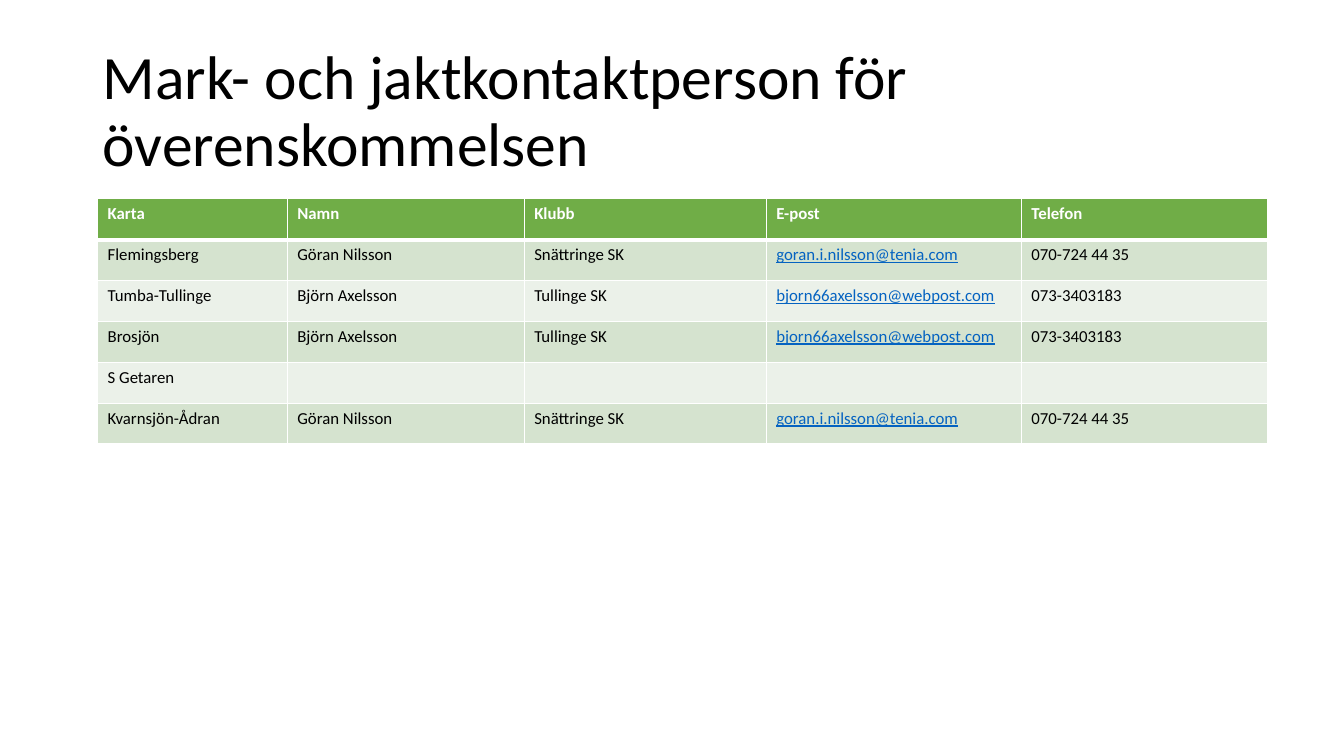
from pptx import Presentation
from pptx.dml.color import RGBColor
from pptx.enum.text import MSO_ANCHOR, PP_ALIGN
from pptx.oxml import parse_xml
from pptx.oxml.ns import nsdecls
from pptx.util import Cm, Pt

BLACK = RGBColor(0x00, 0x00, 0x00)
WHITE = RGBColor(0xFF, 0xFF, 0xFF)
HEADER_GREEN = RGBColor(0x70, 0xAD, 0x47)
BAND_GREENS = (RGBColor(0xEB, 0xF1, 0xE9), RGBColor(0xD5, 0xE3, 0xCF))
LINK_BLUE = RGBColor(0x05, 0x63, 0xC1)

GORAN = ("Göran Nilsson", "Snättringe SK", "goran.i.nilsson@tenia.com", "070-724 44 35")
BJORN = ("Björn Axelsson", "Tullinge SK", "bjorn66axelsson@webpost.com", "073-3403183")
CONTACTS = [
    ("Karta", "Namn", "Klubb", "E-post", "Telefon"),
    ("Flemingsberg", *GORAN),
    ("Tumba-Tullinge", *BJORN),
    ("Brosjön", *BJORN),
    ("S Getaren", "", "", "", ""),
    ("Kvarnsjön-Ådran", *GORAN),
]
COLUMN_WIDTHS = (4.78, 5.97, 6.1, 6.43, 6.2)
ROW_HEIGHT = 1.03
EMAIL_COLUMN = 3


def add_border(cell, side, points):
    cell._tc.get_or_add_tcPr().append(parse_xml(
        f'<a:{side} {nsdecls("a")} w="{Pt(points)}"><a:solidFill>'
        f'<a:srgbClr val="{WHITE}"/></a:solidFill></a:{side}>'))


def format_font(font, values):
    for name, value in values.items():
        if name == "color":
            font.color.rgb = value
        else:
            setattr(font, name, value)


presentation = Presentation()
presentation.slide_width = Cm(33.87)
presentation.slide_height = Cm(19.05)
slide = presentation.slides.add_slide(presentation.slide_layouts[5])

title = slide.shapes.title
title.left, title.top, title.width, title.height = Cm(2.33), Cm(1.01), Cm(29.21), Cm(3.68)
title.text_frame.text = "Mark- och jaktkontaktperson för överenskommelsen"
title.text_frame.word_wrap = True
title.text_frame.vertical_anchor = MSO_ANCHOR.MIDDLE
paragraph = title.text_frame.paragraphs[0]
paragraph.alignment = PP_ALIGN.LEFT
paragraph.line_spacing = 0.9
format_font(paragraph.runs[0].font, {"name": "Calibri", "size": Pt(44), "color": BLACK})

table = slide.shapes.add_table(
    len(CONTACTS), len(COLUMN_WIDTHS), Cm(2.46), Cm(5.01),
    Cm(sum(COLUMN_WIDTHS)), Cm(ROW_HEIGHT * len(CONTACTS))).table
for column, width in zip(table.columns, COLUMN_WIDTHS):
    column.width = Cm(width)

for row_index, contact in enumerate(CONTACTS):
    table.rows[row_index].height = Cm(ROW_HEIGHT)
    is_header = row_index == 0
    for column_index, text in enumerate(contact):
        cell = table.cell(row_index, column_index)
        is_link = column_index == EMAIL_COLUMN and not is_header
        borders = {"lnL": 1, "lnR": 1, "lnT": 3 if row_index == 1 else 1,
                   "lnB": 3 if is_header else 1}
        for side, points in borders.items():
            add_border(cell, side, points)
        cell.fill.solid()
        cell.fill.fore_color.rgb = HEADER_GREEN if is_header else BAND_GREENS[row_index % 2]
        run = cell.text_frame.paragraphs[0].add_run()
        run.text = text
        format_font(run.font, {
            "name": "Calibri", "size": Pt(12), "bold": is_header, "underline": is_link,
            "color": WHITE if is_header else LINK_BLUE if is_link else BLACK})

presentation.save("out.pptx")
